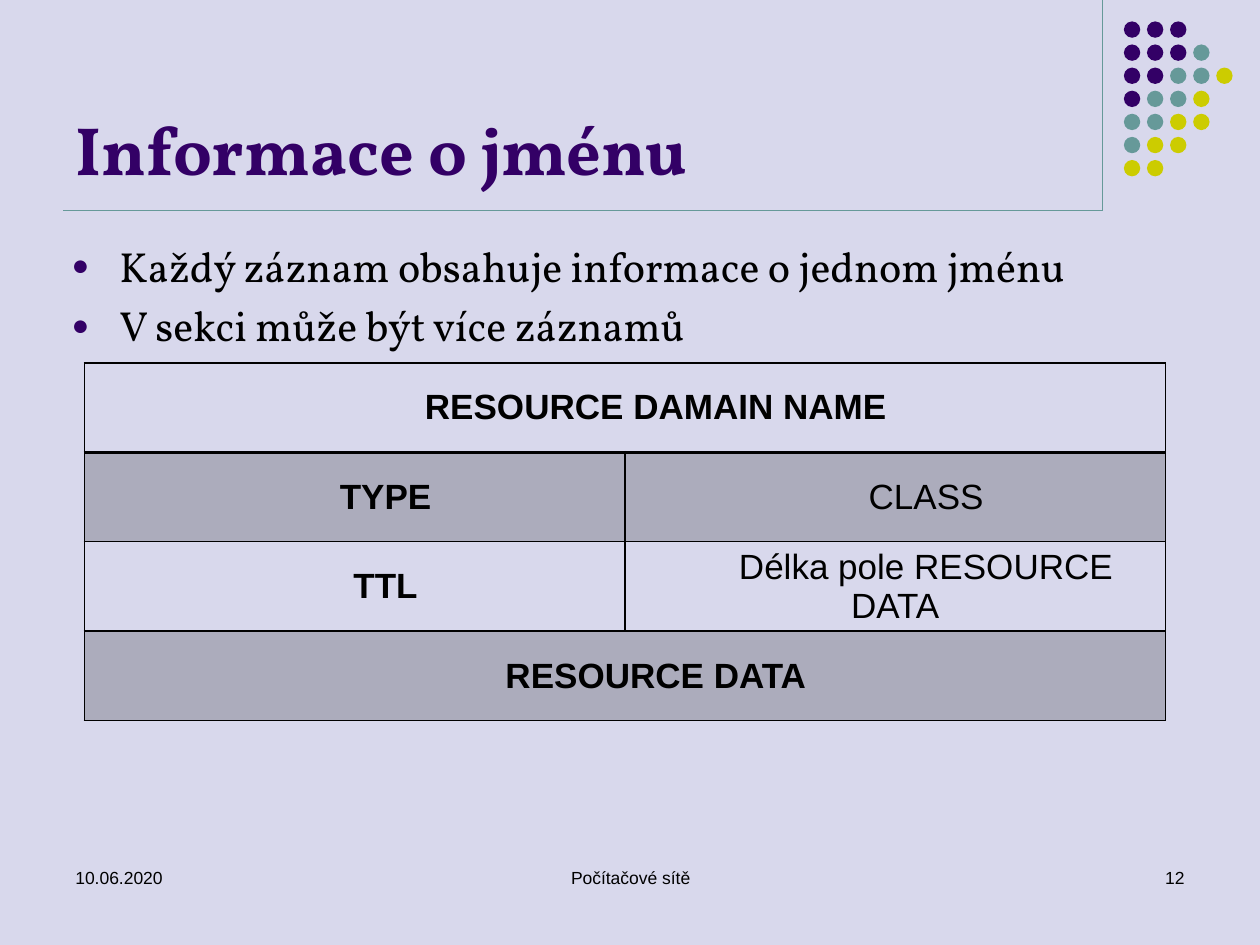
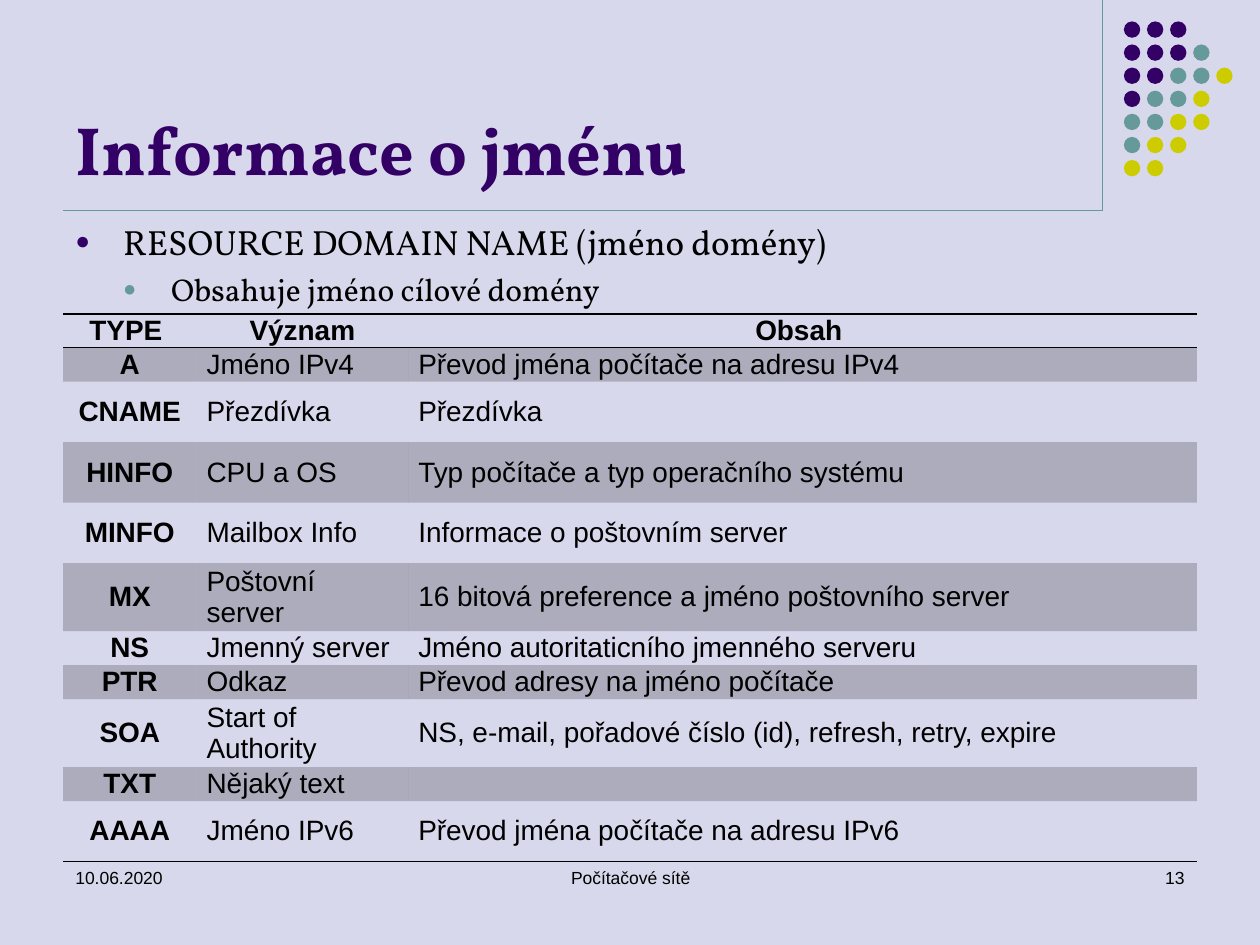
"""Build two slides about DNS resource records and save them to out.pptx."""
from lxml.etree import SubElement
from pptx import Presentation
from pptx.dml.color import RGBColor
from pptx.enum.shapes import MSO_CONNECTOR, MSO_SHAPE
from pptx.enum.text import MSO_ANCHOR, PP_ALIGN
from pptx.oxml.ns import qn
from pptx.util import Inches, Pt

PURPLE, TEAL, YELLOW = "330066", "669999", "CCCC00"
BLACK, LAVENDER = "000000", "D8D8EC"
SERIF, SANS = "Vollkorn", "Arial"
NO_STYLE = "{2D5ABB26-0587-4C30-8999-92F81FD0307C}"
MARGIN, RULE_X, RULE_Y = 0.5, 8.75, 1.67
DOT_SIZE, DOT_PITCH = 0.13, 0.55 / 3
DOT_ROWS = ["PPP", "PPPT", "PPTTY", "PTTY", "TTYY", "TYY", "YY"]
DOT_COLORS = {"P": PURPLE, "T": TEAL, "Y": YELLOW}
LEFT, CENTER, RIGHT = PP_ALIGN.LEFT, PP_ALIGN.CENTER, PP_ALIGN.RIGHT

RECORD_LAYOUT = [
    ["RESOURCE DAMAIN NAME"],
    ["TYPE", "CLASS"],
    ["TTL", "Délka pole RESOURCE DATA"],
    ["RESOURCE DATA"],
]
RECORD_TYPES = [
    ["TYPE ", "Význam", "Obsah "],
    ["A", "Jméno IPv4", "Převod jména počítače na adresu IPv4"],
    ["CNAME", "Přezdívka", "Přezdívka"],
    ["HINFO", "CPU a OS", "Typ počítače a typ operačního systému"],
    ["MINFO", "Mailbox Info", "Informace o poštovním server"],
    ["MX", "Poštovní server", "16 bitová preference a jméno poštovního server"],
    ["NS", "Jmenný server", "Jméno autoritaticního jmenného serveru"],
    ["PTR", "Odkaz", "Převod adresy na jméno počítače"],
    ["SOA", "Start of Authority", "NS, e-mail, pořadové číslo (id), refresh, retry, expire"],
    ["TXT", "Nějaký text", ""],
    ["AAAA", "Jméno IPv6", "Převod jména počítače na adresu IPv6"],
]
LOW, MIDDLE, HIGH = 0.27, 0.48, 0.54

PAGES = [
    {
        "number": "12",
        "body": (0.47, 1.86),
        "bullets": [("Každý záznam obsahuje informace o jednom jménu", 0, 24),
                    ("V sekci může být více záznamů", 0, 24)],
        "corner": (0.67, 2.88),
        "rows": RECORD_LAYOUT,
        "widths": [4.29] * 2,
        "heights": [0.71] * 4,
        "size": 20,
        "indent": 0.49,
        "centered": 2,
        "borders": {row: {"L": 1, "R": 1, "T": 2 if row == 1 else 1, "B": 1 if row else 2}
                    for row in range(4)},
    },
    {
        "number": "13",
        "body": (MARGIN, 1.7),
        "bullets": [("RESOURCE DOMAIN NAME (jméno domény)", 0, 20),
                    ("Obsahuje jméno cílové domény", 1, 18)],
        "corner": (MARGIN, 2.49),
        "rows": RECORD_TYPES,
        "widths": [1.06, 1.68, 6.26],
        "heights": [LOW, LOW, MIDDLE, MIDDLE, MIDDLE, HIGH, LOW, LOW, HIGH, LOW, MIDDLE],
        "size": 16,
        "indent": 0,
        "centered": 1,
        "borders": {0: {"T": 1, "B": 1}, 10: {"B": 1}},
    },
]


def style(paragraph, size, font=SANS, color=BLACK, bold=False, align=LEFT):
    paragraph.alignment = align
    paragraph.font.size = Pt(size)
    paragraph.font.name = font
    paragraph.font.bold = bold
    paragraph.font.color.rgb = RGBColor.from_string(color)


def add_frame(slide, left, top, width, height, text=""):
    frame = slide.shapes.add_textbox(*map(Inches, (left, top, width, height))).text_frame
    frame.word_wrap = True
    frame.text = text
    return frame


deck = Presentation()
deck.slide_width, deck.slide_height = Inches(10), Inches(7.5)

for page in PAGES:
    slide = deck.slides.add_slide(deck.slide_layouts[6])
    slide.background.fill.solid()
    slide.background.fill.fore_color.rgb = RGBColor.from_string(LAVENDER)

    for start in [(RULE_X, 0), (MARGIN, RULE_Y)]:
        rule = slide.shapes.add_connector(
            MSO_CONNECTOR.STRAIGHT, *map(Inches, (*start, RULE_X, RULE_Y)))
        rule.line.color.rgb = RGBColor.from_string(TEAL)
        rule.line.width = Pt(0.75)
        SubElement(rule._element.spPr, qn("a:effectLst"))

    for row, letters in enumerate(DOT_ROWS):
        for column, letter in enumerate(letters):
            dot = slide.shapes.add_shape(
                MSO_SHAPE.OVAL, Inches(8.92 + column * DOT_PITCH),
                Inches(0.17 + row * DOT_PITCH), Inches(DOT_SIZE), Inches(DOT_SIZE))
            dot.shadow.inherit = False
            dot.fill.solid()
            dot.fill.fore_color.rgb = RGBColor.from_string(DOT_COLORS[letter])
            dot.line.fill.background()

    title = add_frame(slide, MARGIN, 0.13, 8.25, 1.42, "Informace o jménu")
    title.vertical_anchor = MSO_ANCHOR.BOTTOM
    style(title.paragraphs[0], 39, SERIF, PURPLE, bold=True)

    body = add_frame(slide, *page["body"], 9, 4.82, "\n".join(b[0] for b in page["bullets"]))
    for point, (_, level, size) in zip(body.paragraphs, page["bullets"]):
        point.level = level
        point.space_before = Pt(1)
        point.space_after = Pt(0.17 * size)
        props = point._p.get_or_add_pPr()
        props.set("marL", str(Inches(0.38 * (level + 1))))
        props.set("indent", str(Inches(-0.38)))
        SubElement(SubElement(props, qn("a:buClr")), qn("a:srgbClr"), val=[PURPLE, TEAL][level])
        SubElement(props, qn("a:buSzPct"), val="70000")
        SubElement(props, qn("a:buFont"), typeface=SANS)
        SubElement(props, qn("a:buChar"), char="●")
        style(point, size, SERIF)

    for left, width, text, align in [(MARGIN, 2.33, "10.06.2020", LEFT),
                                     (3.42, 3.17, "Počítačové sítě", CENTER),
                                     (7.17, 2.33, page["number"], RIGHT)]:
        footer = add_frame(slide, left, 6.83, width, 0.5, text)
        style(footer.paragraphs[0], 10, align=align)

    widths, heights = page["widths"], page["heights"]
    records = slide.shapes.add_table(
        len(heights), len(widths),
        *map(Inches, (*page["corner"], sum(widths), sum(heights)))).table
    records.first_row = records.horz_banding = False
    records._tbl.tblPr.find(qn("a:tableStyleId")).text = NO_STYLE
    for column, width in zip(records.columns, widths):
        column.width = Inches(width)
    for row, (height, texts) in enumerate(zip(heights, page["rows"])):
        records.rows[row].height = Inches(height)
        if len(texts) < len(widths):
            records.cell(row, 0).merge(records.cell(row, len(widths) - 1))
        for column in range(len(widths)):
            cell = records.cell(row, column)
            cell.vertical_anchor = MSO_ANCHOR.MIDDLE
            cell.margin_left = cell.margin_right = Inches(0.08)
            cell.margin_top = cell.margin_bottom = 0
            props = cell._tc.get_or_add_tcPr()
            for side, weight in page["borders"].get(row, {}).items():
                edge = SubElement(props, qn(f"a:ln{side}"), w=str(Pt(weight)))
                SubElement(SubElement(edge, qn("a:solidFill")), qn("a:srgbClr"), val=BLACK)
            if row % 2:
                cell.fill.solid()
                cell.fill.fore_color.rgb = RGBColor.from_string(BLACK)
                SubElement(next(props.iterchildren(qn("a:solidFill")))[0],
                           qn("a:alpha"), val="20000")
            else:
                cell.fill.background()
            cell.text = texts[column] if column < len(texts) else ""
            entry = cell.text_frame.paragraphs[0]
            entry._p.get_or_add_pPr().set("indent", str(Inches(page["indent"])))
            centered = row == 0 or column < page["centered"]
            style(entry, page["size"], bold=row == 0 or column == 0,
                  align=CENTER if centered else LEFT)

deck.save("out.pptx")
